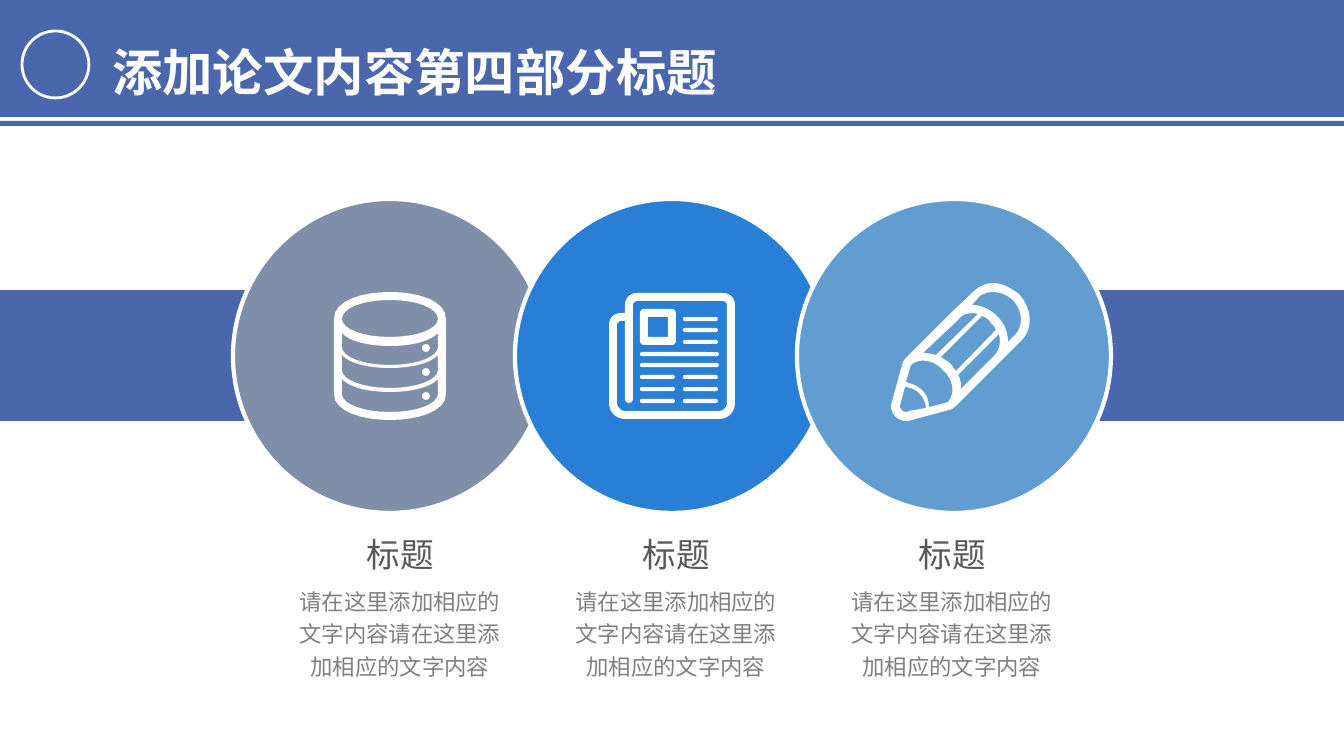
from dataclasses import dataclass
from lxml.etree import SubElement
from pptx import Presentation
from pptx.dml.color import RGBColor
from pptx.enum.shapes import MSO_SHAPE
from pptx.enum.text import MSO_ANCHOR, MSO_AUTO_SIZE, PP_ALIGN
from pptx.oxml.ns import qn
from pptx.util import Pt

TITLE = "添加论文内容第四部分标题"
COLUMNS = [("标题", "请在这里添加相应的文字内容请在这里添加相应的文字内容")] * 3


@dataclass(frozen=True)
class Theme:
    font: str = "Noto Sans CJK SC"
    white: str = "FFFFFF"
    band: str = "4A66AC"
    discs: tuple = ("7F8FA9", "297FD5", "629DD1")
    heading: str = "595959"
    body: str = "808080"
    title_size: int = 36
    heading_size: int = 24
    body_size: int = 16


THEME = Theme()
PX = 914400 / 100.8
WIDTH, HEIGHT = 1344, 756
BANDS = [(0, 0, WIDTH, 117), (0, 121, WIDTH, 5), (999, 290, 345, 131), (0, 290, 345, 131)]
BADGE = (22, 31, 67, 67)
TITLE_BOX = (102, 6, 629, 93)
DISC, DISC_STEP = (233, 199, 314, 314), 282
HEADING_BOX, BODY_BOX, TEXT_STEP = (327, 515, 147, 79), (285, 578, 230, 108), 276

# Contours hold line points (x, y) and cubic segments (x1, y1, x2, y2, x, y).
NEWSPAPER = [
    [(723, 293), (637, 293), (630, 293, 625, 298, 625, 305), (625, 313), (621, 313),
     (614, 313, 609, 318, 609, 325), (609, 403), (609, 412, 616, 419, 625, 419), (719, 419),
     (728, 419, 735, 412, 735, 403), (735, 305), (735, 298, 730, 293, 723, 293)],
    [(727, 403), (727, 407, 723, 411, 719, 411), (625, 411), (621, 411, 617, 407, 617, 403),
     (617, 325), (617, 323, 619, 321, 621, 321), (625, 321), (625, 399),
     (625, 401, 627, 403, 629, 403), (631, 403, 633, 401, 633, 399), (633, 305),
     (633, 303, 635, 301, 637, 301), (723, 301), (725, 301, 727, 303, 727, 305)],
]
PHOTO = [
    [(644, 345), (672, 345), (674, 345, 676, 343, 676, 341), (676, 313),
     (676, 311, 674, 309, 672, 309), (644, 309), (642, 309, 640, 311, 640, 313), (640, 341),
     (640, 343, 642, 345, 644, 345)],
    [(648, 317), (668, 317), (668, 337), (648, 337)],
]
LEFT, RIGHT, FULL = (640, 35), (683, 35), (640, 79)
PRINT_ROWS = [[RIGHT]] * 3 + [[FULL]] * 2 + [[LEFT, RIGHT]] * 3
PRINT_TOP, PRINT_SPAN, PRINT_HEIGHT = 317, 82, 4
PENCIL = [
    [(1019, 294), (1011, 288, 1002, 283, 993, 283), (986, 283, 978, 287, 973, 292), (952, 312),
     (906, 358), (904, 360, 903, 362, 902, 365), (892, 402), (892, 402, 891, 405, 891, 406),
     (891, 414, 898, 421, 906, 421), (908, 421, 912, 420, 912, 420), (949, 410),
     (951, 410, 953, 408, 956, 406), (1021, 341), (1034, 329, 1032, 308, 1019, 294)],
    [(961, 386), (961, 382, 960, 378, 958, 375), (999, 334), (1001, 342, 1000, 350, 994, 356),
     (961, 389)],
    [(956, 371), (954, 369, 952, 365, 950, 363), (947, 361, 944, 359, 941, 357), (982, 316),
     (986, 317, 989, 320, 991, 323), (993, 325, 995, 327, 996, 330)],
    [(936, 355), (932, 354, 928, 353, 923, 353), (958, 320), (963, 313, 971, 312, 978, 314)],
    [(909, 411), (908, 412, 907, 412, 906, 412), (903, 412, 900, 409, 900, 406), (905, 387),
     (909, 387, 915, 389, 919, 393), (923, 397, 926, 403, 926, 408)],
    [(929, 407), (929, 401, 927, 395, 922, 390), (918, 386, 912, 384, 906, 382), (910, 368),
     (910, 366, 912, 365, 912, 364), (920, 358, 934, 360, 943, 370),
     (953, 379, 956, 393, 948, 402), (947, 402, 946, 403, 945, 403)],
    [(1016, 334), (1008, 342), (1008, 339), (1007, 330, 1004, 323, 997, 316),
     (990, 309, 981, 305, 972, 305), (979, 297), (982, 294, 988, 292, 993, 292),
     (1000, 292, 1007, 295, 1013, 300), (1018, 306, 1021, 312, 1021, 320),
     (1021, 325, 1019, 330, 1016, 334)],
]
DRUM = [
    [(390, 292), (363, 292, 334, 300, 334, 319), (334, 394), (334, 412, 363, 420, 390, 420),
     (417, 420, 446, 412, 446, 394), (446, 319), (446, 300, 417, 292, 390, 292)],
    [(390, 337), (363, 337, 342, 329, 342, 319), (342, 308, 363, 300, 390, 300),
     (417, 300, 438, 308, 438, 319), (438, 329, 417, 337, 390, 337)],
]
DRUM_LAYERS = [(333, 347), (355, 370), (379, 394)]
DRUM_LIGHTS = [(422, y, 8, 8) for y in (344, 368, 392)]


def emu(values):
    return [round(v * PX) for v in values]


def shift(box, dx):
    return (box[0] + dx, *box[1:])


def paint(sp, fill, line=None):
    sp.shadow.inherit = False
    sp.fill.solid()
    sp.fill.fore_color.rgb = RGBColor.from_string(fill)
    if line:
        sp.line.color.rgb = RGBColor.from_string(THEME.white)
        sp.line.width = Pt(line)
    else:
        sp.line.fill.background()


def add_preset(shapes, kind, box, fill, line=None):
    sp = shapes.add_shape(kind, *emu(box))
    paint(sp, fill, line)
    return sp


def flatten(contour, steps=8):
    points = []
    for seg in contour:
        if len(seg) == 2:
            points.append(seg)
            continue
        a, b, c, d = points[-1], seg[:2], seg[2:4], seg[4:]
        for t in (i / steps for i in range(1, steps + 1)):
            u = 1 - t
            points.append(tuple(u**3 * a[k] + 3 * u * u * t * b[k] + 3 * u * t * t * c[k]
                                + t**3 * d[k] for k in (0, 1)))
    return [tuple(emu(p)) for p in points]


def add_outline(shapes, contours):
    first, *holes = [flatten(c) for c in contours]
    builder = shapes.build_freeform(*first[0])
    builder.add_line_segments(first[1:])
    for hole in holes:
        builder.move_to(*hole[0])
        builder.add_line_segments(hole[1:])
    paint(builder.convert_to_shape(), THEME.white)


def drum_layer(top, bottom):
    return [(438, bottom), (438, bottom + 10, 417, bottom + 18, 390, bottom + 18),
            (363, bottom + 18, 342, bottom + 10, 342, bottom), (342, top),
            (350, top + 9, 370, top + 13, 390, top + 13),
            (410, top + 13, 430, top + 9, 438, top)]


def write(sp, box, text, size, color, para, frame, bold=False):
    sp.left, sp.top, sp.width, sp.height = emu(box)
    tf = sp.text_frame
    frame = {"word_wrap": True, "auto_size": MSO_AUTO_SIZE.NONE, **frame}
    p = tf.paragraphs[0]
    r = p.add_run()
    r.text = text
    font = {"name": THEME.font, "size": Pt(size), "bold": bold}
    for target, values in ((tf, frame), (p, para), (r.font, font)):
        for name, value in values.items():
            setattr(target, name, value)
    r.font.color.rgb = RGBColor.from_string(color)
    SubElement(r.font._element, qn("a:ea"), typeface=THEME.font)


def main():
    prs = Presentation()
    prs.slide_width, prs.slide_height = emu((WIDTH, HEIGHT))
    s = prs.slides.add_slide(prs.slide_layouts[5])
    shapes = s.shapes

    for box in BANDS:
        add_preset(shapes, MSO_SHAPE.RECTANGLE, box, THEME.band)
    add_preset(shapes, MSO_SHAPE.OVAL, BADGE, THEME.band, 2)
    title = shapes.title
    title.element.getparent().append(title.element)
    write(title, TITLE_BOX, TITLE, THEME.title_size, THEME.white,
          {"alignment": PP_ALIGN.LEFT, "line_spacing": 1.5},
          {"vertical_anchor": MSO_ANCHOR.TOP}, True)

    for i, fill in enumerate(THEME.discs):
        add_preset(shapes, MSO_SHAPE.OVAL, shift(DISC, i * DISC_STEP), fill, 3)

    news = shapes.add_group_shape().shapes
    add_outline(news, NEWSPAPER)
    add_outline(news, PHOTO)
    for i, row in enumerate(PRINT_ROWS):
        y = PRINT_TOP + i * PRINT_SPAN // (len(PRINT_ROWS) - 1)
        for x, width in row:
            bar = add_preset(news, MSO_SHAPE.ROUNDED_RECTANGLE,
                             (x, y, width, PRINT_HEIGHT), THEME.white)
            bar.adjustments[0] = 0.5
    add_outline(shapes, PENCIL)
    drum = shapes.add_group_shape().shapes
    add_outline(drum, DRUM + [drum_layer(*layer) for layer in DRUM_LAYERS])
    for box in DRUM_LIGHTS:
        add_preset(drum, MSO_SHAPE.OVAL, box, THEME.white)

    centred = {"alignment": PP_ALIGN.CENTER}
    for i, (heading, body) in enumerate(COLUMNS):
        for box, text, size, color, para, frame in (
            (HEADING_BOX, heading, THEME.heading_size, THEME.heading, centred,
             {"vertical_anchor": MSO_ANCHOR.MIDDLE}),
            (BODY_BOX, body, THEME.body_size, THEME.body, {**centred, "line_spacing": 1.2}, {}),
        ):
            place = shift(box, i * TEXT_STEP)
            write(shapes.add_textbox(*emu(place)), place, text, size, color, para, frame)

    prs.save("out.pptx")


if __name__ == "__main__":
    main()
